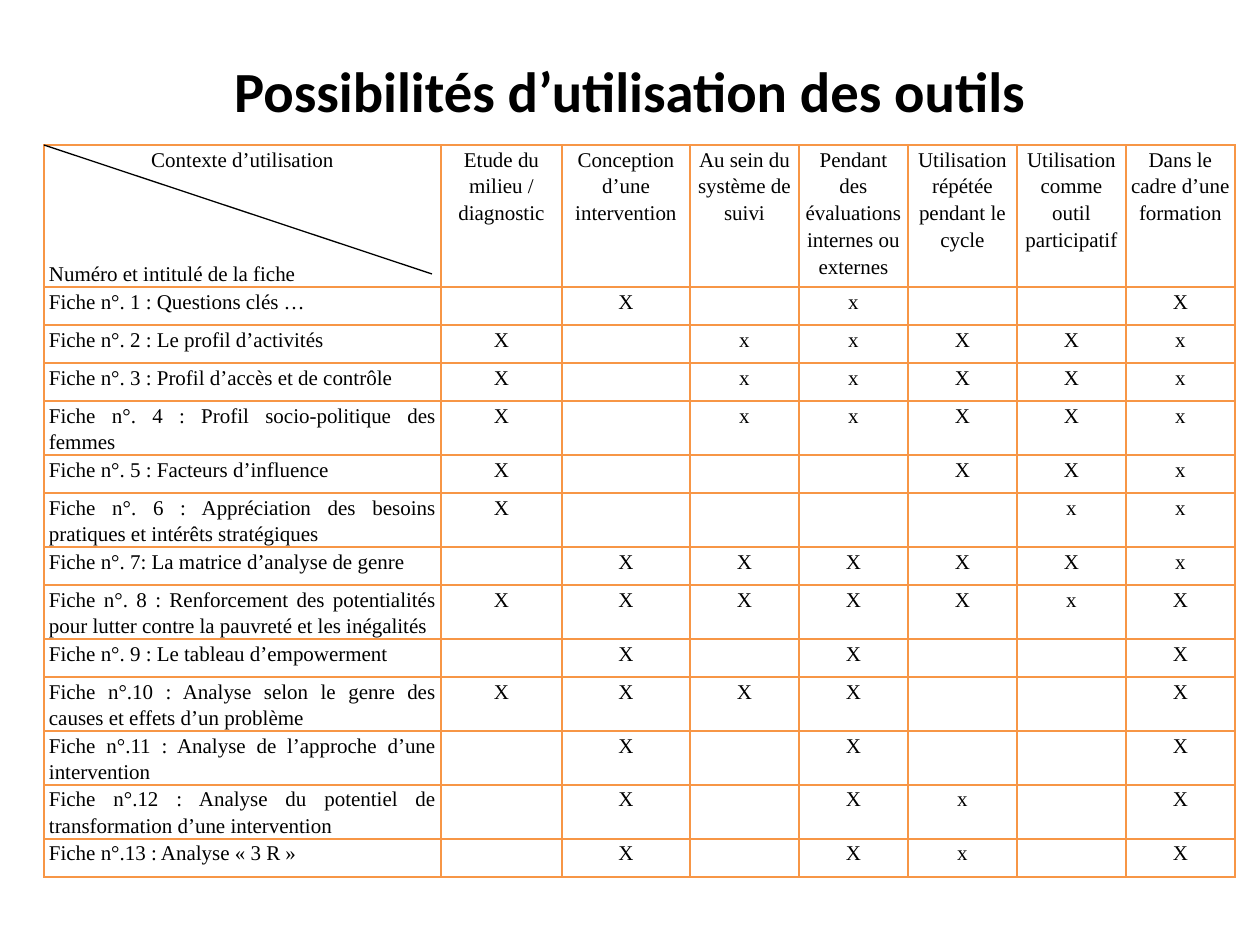
import pptx
import pptx.dml.color
import pptx.enum.shapes
import pptx.enum.text
import pptx.oxml.ns
import pptx.util
from lxml import etree

PX = 914400 / 126  # EMU in one px
ALIGN = pptx.enum.text.PP_ALIGN
qn = pptx.oxml.ns.qn


def color(value):
    return pptx.dml.color.RGBColor.from_string(value)


def write(para, text, font="Times New Roman", size=12, bold=False,
          align=ALIGN.CENTER, spacing=1.15, before=0, after=0):
    para.alignment = align
    para.line_spacing = spacing
    para.space_before = pptx.util.Pt(before)
    para.space_after = pptx.util.Pt(after)
    if not text:
        # An empty cell takes its line height from the end mark
        etree.SubElement(para._p, qn("a:endParaRPr"), sz=str(size * 100))
        return
    span = para.add_run()
    span.text = text
    span.font.name = font
    span.font.size = pptx.util.Pt(size)
    span.font.bold = bold
    span.font.color.rgb = color("000000")


deck = pptx.Presentation()
deck.slide_width = round(1260 * PX)
deck.slide_height = round(945 * PX)
page = deck.slides.add_slide(deck.slide_layouts[5])

# Title
title = page.shapes.title
title.left, title.top, title.width, title.height = [
    round(v * PX) for v in (63, 45, 1134, 79)]
frame = title.text_frame
frame.auto_size = pptx.enum.text.MSO_AUTO_SIZE.NONE
frame.vertical_anchor = pptx.enum.text.MSO_ANCHOR.MIDDLE
frame.margin_top, frame.margin_bottom = round(10 * PX), 0
write(frame.paragraphs[0], "Possibilités d’utilisation des outils",
      font="Calibri", size=32.4, bold=True, spacing=1.0)

# Table content: one mark per context, a dot for none
contexts = [
    "Etude du milieu / diagnostic",
    "Conception d’une intervention",
    "Au sein du système de suivi",
    "Pendant des évaluations internes ou externes",
    "Utilisation répétée pendant le cycle",
    "Utilisation comme outil participatif",
    "Dans le cadre d’une formation",
]
SINGLE, DOUBLE = 38, 54
sheets = [
    ("Fiche n°. 1 : Questions clés …", ".X.x..X", SINGLE),
    ("Fiche n°. 2 : Le profil d’activités", "X.xxXXx", SINGLE),
    ("Fiche n°. 3 : Profil d’accès et de contrôle", "X.xxXXx", SINGLE),
    ("Fiche n°. 4 : Profil socio-politique des femmes", "X.xxXXx", DOUBLE),
    ("Fiche n°. 5 : Facteurs d’influence", "X...XXx", SINGLE),
    ("Fiche n°. 6 : Appréciation des besoins pratiques et intérêts stratégiques",
     "X....xx", DOUBLE),
    ("Fiche n°. 7: La matrice d’analyse de genre", ".XXXXXx", SINGLE),
    ("Fiche n°. 8 : Renforcement des potentialités pour lutter contre la "
     "pauvreté et les inégalités", "XXXXXxX", DOUBLE),
    ("Fiche n°. 9 : Le tableau d’empowerment", ".X.X..X", SINGLE),
    ("Fiche n°.10 : Analyse selon le genre des causes et effets d’un problème",
     "XXXX..X", DOUBLE),
    ("Fiche n°.11 : Analyse de l’approche d’une intervention", ".X.X..X", DOUBLE),
    ("Fiche n°.12 : Analyse du potentiel de transformation d’une intervention",
     ".X.Xx.X", DOUBLE),
    ("Fiche n°.13 : Analyse « 3 R »", ".X.Xx.X", SINGLE),
]
rows = [["Contexte d’utilisation", *contexts]]
rows += [[name, *marks.replace(".", " ")] for name, marks, _ in sheets]
widths = [397, 121, 128] + [109] * 5
heights = [142] + [height for _, _, height in sheets]

# Table grid
table = page.shapes.add_table(
    len(rows), len(widths), round(44 * PX), round(145 * PX),
    round(sum(widths) * PX), round(sum(heights) * PX)).table
table.first_row = False
table.horz_banding = False
for column, width in zip(table.columns, widths):
    column.width = round(width * PX)
for row, height in zip(table.rows, heights):
    row.height = round(height * PX)

# Cells: text, then borders, then fill
for r, texts in enumerate(rows):
    for c, text in enumerate(texts):
        cell = table.cell(r, c)
        cell.margin_left = cell.margin_right = round(5 * PX)
        cell.margin_top = cell.margin_bottom = 0
        is_name = r > 0 and c == 0
        write(cell.text_frame.paragraphs[0], text.strip(),
              align=ALIGN.JUSTIFY if is_name else ALIGN.CENTER)
        properties = cell._tc.get_or_add_tcPr()
        for side in ("a:lnL", "a:lnR", "a:lnT", "a:lnB"):
            border = etree.SubElement(properties, qn(side), w="12700")
            paint = etree.SubElement(border, qn("a:solidFill"))
            etree.SubElement(paint, qn("a:srgbClr"), val="F79646")
        cell.fill.background()

# Second label of the split corner cell
write(table.cell(0, 0).text_frame.add_paragraph(),
      "Numéro et intitulé de la fiche", align=ALIGN.LEFT, before=50)

# Diagonal of the corner cell
diagonal = page.shapes.add_connector(
    pptx.enum.shapes.MSO_CONNECTOR.STRAIGHT,
    *[round(v * PX) for v in (44, 145, 432, 274)])
diagonal.line.color.rgb = color("000000")
diagonal.line.width = pptx.util.Pt(0.75)
etree.SubElement(diagonal._element.spPr, qn("a:effectLst"))

deck.save("out.pptx")
